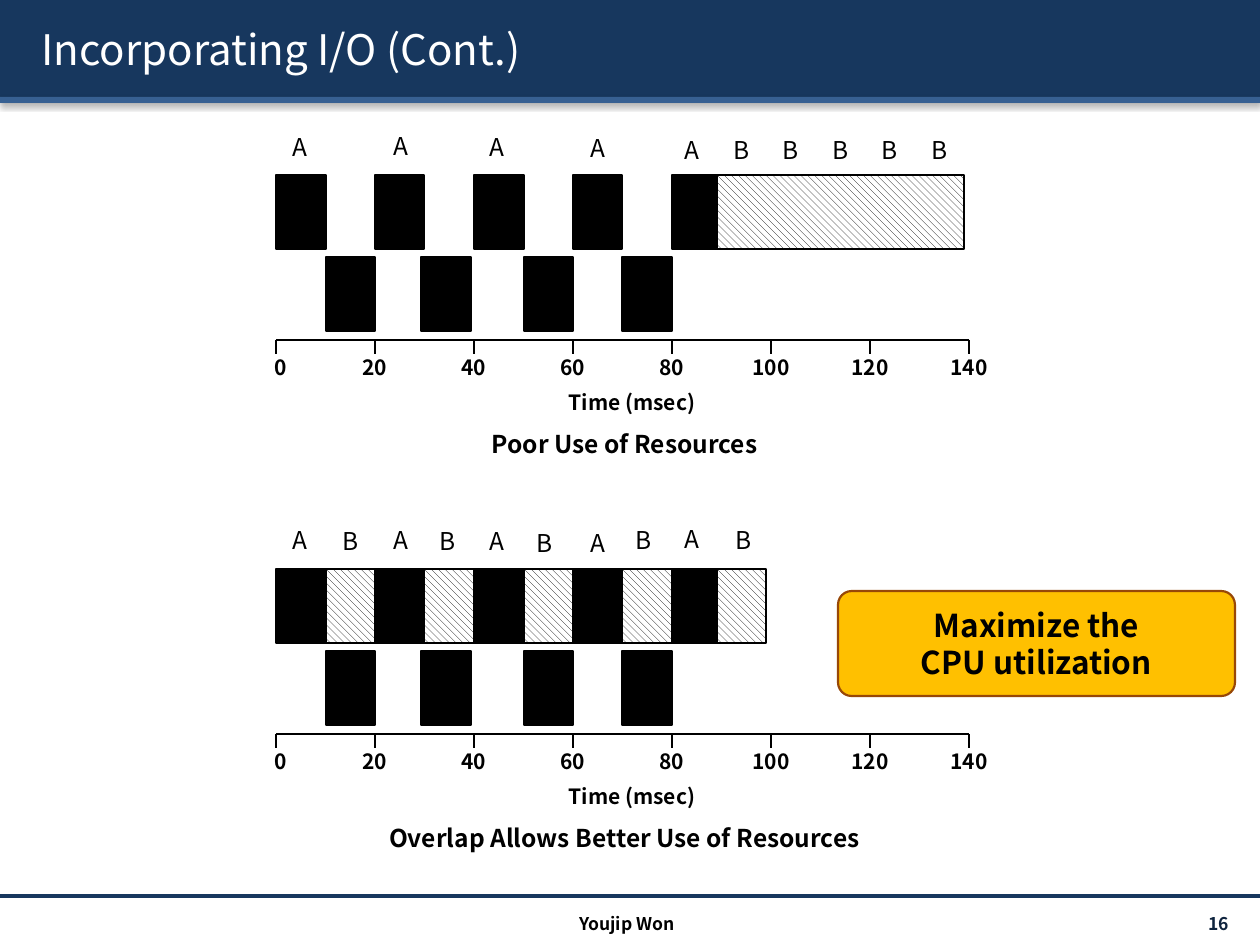
from lxml import etree
from pptx import Presentation
from pptx.dml.color import RGBColor
from pptx.enum.dml import MSO_PATTERN
from pptx.enum.shapes import MSO_CONNECTOR, MSO_SHAPE
from pptx.enum.text import MSO_ANCHOR, PP_ALIGN
from pptx.oxml import parse_xml
from pptx.oxml.ns import nsdecls, qn
from pptx.util import Emu, Pt

FONT = "Noto Sans CJK KR"
BLACK = RGBColor(0x00, 0x00, 0x00)
WHITE = RGBColor(0xFF, 0xFF, 0xFF)
NAVY = RGBColor(0x17, 0x37, 0x5E)
BLUE = RGBColor(0x37, 0x60, 0x92)
INK = RGBColor(0x0F, 0x24, 0x3E)
AMBER = RGBColor(0xFF, 0xC0, 0x00)
BROWN = RGBColor(0x98, 0x48, 0x07)

# Content: jobs are (start, end) in msec, labels are (letter, centre x, top y)
TITLE = "Incorporating I/O (Cont.)"
CALLOUT = ["Maximize the", "CPU utilization"]
AXIS_TITLE = "Time (msec)"
TICKS = range(0, 141, 20)
JOB_A = [(0, 10), (20, 30), (40, 50), (60, 70), (80, 89)]
DISK = [(10, 20), (29.3, 39.3), (50, 60), (70, 80)]
TIMELINES = [
    {"top": 175, "caption": "Poor Use of Resources",
     "job_b": [(89, 139)],
     "labels": [("A", 300, 126), ("A", 401, 125), ("A", 497, 126),
                ("A", 598, 127), ("A", 692, 129), ("B", 742, 129),
                ("B", 791, 129), ("B", 841, 129), ("B", 890, 129),
                ("B", 940, 129)]},
    {"top": 569, "caption": "Overlap Allows Better Use of Resources",
     "job_b": [(10, 20), (30, 40), (50, 60), (70, 80), (89, 99)],
     "labels": [("A", 300, 519), ("B", 351, 520), ("A", 401, 519),
                ("B", 448, 520), ("A", 497, 520), ("B", 545, 522),
                ("A", 598, 522), ("B", 644, 519), ("A", 692, 518),
                ("B", 744, 519)]},
]

# Timeline geometry in px
AXIS_X, PX_PER_20 = 276, 99
BAR_H, DISK_DY, AXIS_DY, TICK_H = 74, 82, 165, 14

prs = Presentation()


def px(n):
    return Emu(round(n * 914400 / 126))


prs.slide_width, prs.slide_height = px(1260), px(945)
slide = prs.slides.add_slide(prs.slide_layouts[5])
shapes = slide.shapes


def time_x(msec):
    return round(AXIS_X + msec * PX_PER_20 / 20)


def shadow(blur, dist, alpha, angle):
    return parse_xml(
        f'<a:effectLst {nsdecls("a")}><a:outerShdw blurRad="{Pt(blur)}" '
        f'dist="{Pt(dist)}" dir="{angle * 60000}" algn="tl" rotWithShape="0">'
        f'<a:srgbClr val="000000"><a:alpha val="{alpha * 1000}"/></a:srgbClr>'
        '</a:outerShdw></a:effectLst>')


def write(tf, lines, size, color=BLACK, bold=False, align=PP_ALIGN.CENTER):
    tf.word_wrap = True
    for i, line in enumerate(lines):
        p = tf.add_paragraph() if i else tf.paragraphs[0]
        p.alignment = align
        r = p.add_run()
        r.text = line
        r.font.name, r.font.size, r.font.bold = FONT, Pt(size), bold
        r.font.color.rgb = color
        etree.SubElement(r.font._element, qn("a:ea")).set("typeface", FONT)


def text(x, y, w, h, line, size, **style):
    tf = shapes.add_textbox(px(x), px(y), px(w), px(h)).text_frame
    write(tf, [line], size, **style)
    return tf


def box(x, y, w, h, fill, kind=MSO_SHAPE.RECTANGLE, line=None, weight=0.75):
    sp = shapes.add_shape(kind, px(x), px(y), px(w), px(h))
    sp.shadow.inherit = False
    sp.fill.solid()
    sp.fill.fore_color.rgb = fill
    if line is None:
        sp.line.fill.background()
    else:
        sp.line.color.rgb, sp.line.width = line, Pt(weight)
    return sp


def rule(x1, y1, x2, y2, color=BLACK, weight=1.5):
    c = shapes.add_connector(MSO_CONNECTOR.STRAIGHT, px(x1), px(y1), px(x2), px(y2))
    c.line.color.rgb, c.line.width = color, Pt(weight)
    etree.SubElement(c._element.spPr, qn("a:effectLst"))


def bars(jobs, y, hatched=False):
    for start, end in jobs:
        x = time_x(start)
        sp = box(x, y, time_x(end) - x, BAR_H, BLACK, line=BLACK)
        if hatched:
            sp.fill.patterned()
            sp.fill.pattern = MSO_PATTERN.WIDE_DOWNWARD_DIAGONAL
            sp.fill.fore_color.rgb, sp.fill.back_color.rgb = BLACK, WHITE


def timeline(top, caption, job_b, labels):
    bars(job_b, top, hatched=True)
    bars(JOB_A, top)
    bars(DISK, top + DISK_DY)
    for letter, center, y in labels:
        text(center - 25, y, 50, 43, letter, 14)
    # Axis
    axis_y = top + AXIS_DY
    rule(AXIS_X, axis_y, time_x(TICKS[-1]), axis_y)
    for msec in TICKS:
        x = time_x(msec)
        rule(x, axis_y, x, axis_y + TICK_H)
        center = x if msec else x + 5
        text(center - 35, axis_y + 8, 70, 38, str(msec), 12, bold=True)
    text(528, axis_y + 43, 208, 38, AXIS_TITLE, 12, bold=True)
    text(363, axis_y + 83, 523, 43, caption, 14, bold=True)


# Header bands and title
for y, h, color in [(0, 97, NAVY), (97, 6, BLUE)]:
    band = box(0, y, 1260, h, color)
    band._element.spPr.remove(band._element.spPr.find(qn("a:effectLst")))
    band._element.spPr.append(shadow(3.1, 1.6, 38, 90))

title = shapes.title
title.left, title.top, title.width, title.height = px(29), px(8), px(1211), px(81)
write(title.text_frame, [TITLE], 24, color=WHITE, align=PP_ALIGN.LEFT)
title.text_frame.vertical_anchor = MSO_ANCHOR.MIDDLE
rPr = title.text_frame.paragraphs[0].runs[0].font._element
rPr.find(qn("a:solidFill")).addnext(shadow(3, 2, 100, 45))
shapes._spTree.append(title._element)  # in front of the bands

# Footer
rule(0, 896, 1260, 896, NAVY, 2)
number = text(1097, 908, 144, 30, "16", 10, color=INK, bold=True, align=PP_ALIGN.RIGHT)
number.vertical_anchor = MSO_ANCHOR.MIDDLE
text(418, 907, 418, 30, "Youjip Won", 10, bold=True)

# Timelines
for t in TIMELINES:
    timeline(**t)

# Callout
callout = box(838, 591, 397, 105, AMBER, MSO_SHAPE.ROUNDED_RECTANGLE, BROWN, 1.25)
callout.adjustments[0] = 0.13
write(callout.text_frame, CALLOUT, 18, bold=True)
callout.text_frame.vertical_anchor = MSO_ANCHOR.MIDDLE

prs.save("out.pptx")
